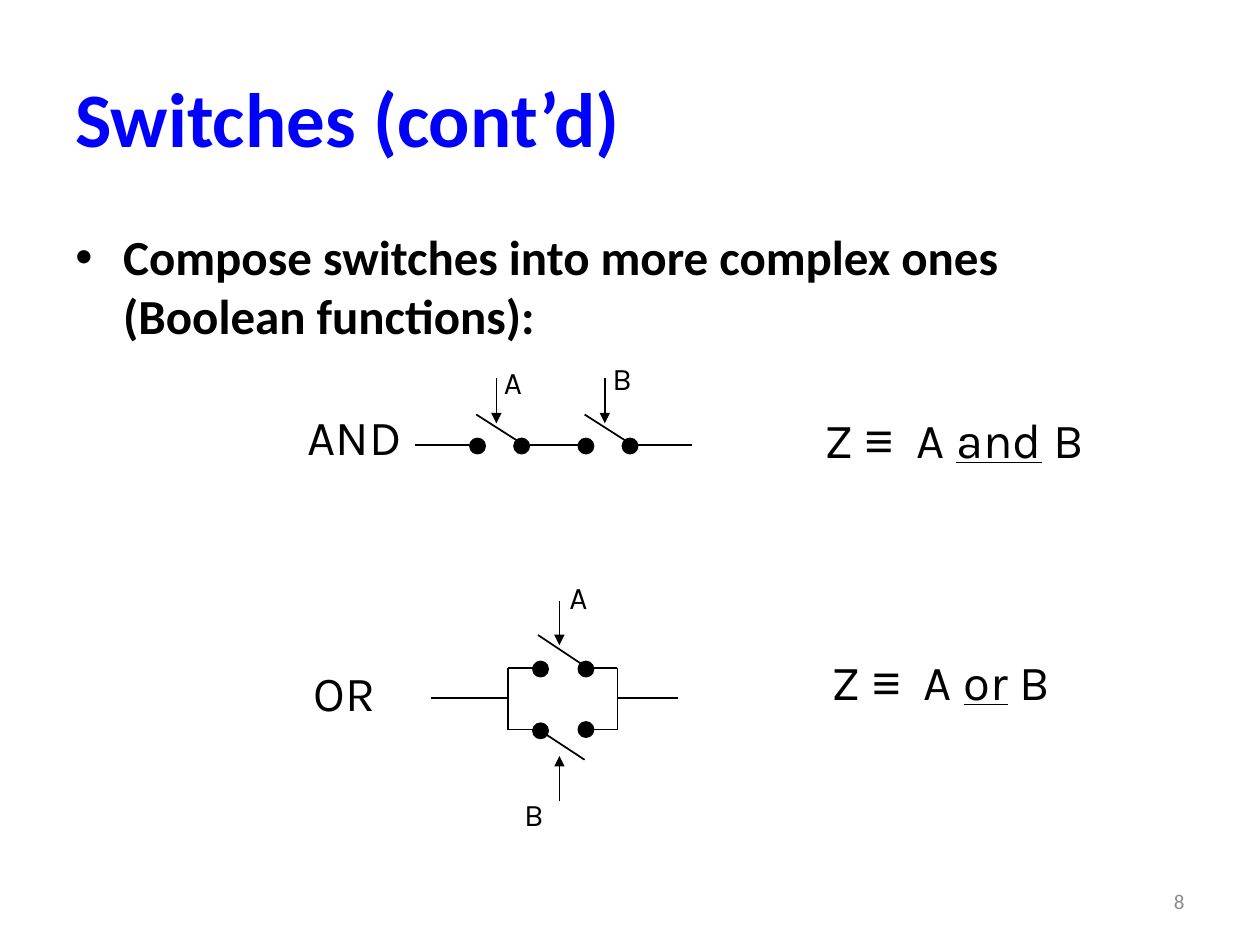
from pptx import Presentation
from pptx.dml.color import RGBColor
from pptx.enum.shapes import MSO_CONNECTOR as Connector, MSO_SHAPE as Shape
from pptx.enum.text import MSO_ANCHOR as Anchor, PP_ALIGN as Align
from pptx.oxml.ns import qn
from pptx.util import Inches, Pt
from lxml.etree import SubElement

BLACK, BLUE, GREY = "000000", "0000FF", "8C8C8C"
DOT = 0.12


def color(hex_value):
    return RGBColor.from_string(hex_value)


def write(paragraph, text, font="Karla", size=28, fill=BLACK, bold=False, underline=False):
    run = paragraph.add_run()
    run.text = text
    run.font.name, run.font.size = font, Pt(size)
    run.font.bold, run.font.underline = bold, underline
    run.font.color.rgb = color(fill)


class SwitchSlide:
    """Holds the drawing style and the slide being drawn."""

    def __init__(self, slide, ink=BLACK, weight=1):
        self.slide, self.ink, self.weight = slide, ink, weight

    def box(self, left, top, width, height, margins=(0.1, 0.05), wrap=True, anchor=Anchor.TOP):
        frame = self.slide.shapes.add_textbox(*map(Inches, (left, top, width, height))).text_frame
        frame.word_wrap, frame.vertical_anchor = wrap, anchor
        frame.margin_left = frame.margin_right = Inches(margins[0])
        frame.margin_top = frame.margin_bottom = Inches(margins[1])
        return frame.paragraphs[0]

    def label(self, text, left, top, width=0.6, height=0.49, size=18):
        paragraph = self.box(left, top, width, height, (0.02, 0.03), wrap=False)
        paragraph.line_spacing = Pt(26)
        if text:
            write(paragraph, text, size=size)
        return paragraph

    def formula(self, operator, left, top, width=2.2):
        paragraph = self.label("", left, top, width, 0.64)
        paragraph.space_before = Pt(11)
        write(paragraph, "Z ")
        write(paragraph, "≡", font="Arial")
        write(paragraph, "  A ")
        write(paragraph, operator, underline=True)
        write(paragraph, " B")

    def bullet(self, paragraph):
        props = paragraph._p.get_or_add_pPr()
        props.set("marL", str(Inches(0.38)))
        props.set("indent", str(-Inches(0.38)))
        SubElement(props, qn("a:buFont"), typeface="Arial")
        SubElement(props, qn("a:buChar"), char="•")

    def wire(self, x1, y1, x2, y2, arrow=False):
        wire = self.slide.shapes.add_connector(
            Connector.STRAIGHT, *map(Inches, (x1, y1, x2, y2)))
        wire.line.color.rgb = color(self.ink)
        wire.line.width = Pt(self.weight)
        if arrow:
            SubElement(wire.line._get_or_add_ln(), qn("a:tailEnd"), type="triangle")
        SubElement(wire._element.spPr, qn("a:effectLst"))

    def contact(self, left, top):
        dot = self.slide.shapes.add_shape(Shape.OVAL, *map(Inches, (left, top, DOT, DOT)))
        dot.shadow.inherit = False
        dot.fill.solid()
        dot.fill.fore_color.rgb = dot.line.color.rgb = color(self.ink)
        dot.line.width = Pt(self.weight)


def draw_and(page):
    page.label("AND", 2.42, 3.3, 0.99, size=28)
    for start in (3.29, 4.15, 5.01):
        page.wire(start, 3.53, start + 0.48, 3.53)
    for left, name, label_top in ((3.73, "A", 2.79), (4.59, "B", 2.76)):
        page.wire(left + 0.05, 3.29, left + 0.41, 3.52)
        page.wire(left + 0.21, 3, left + 0.21, 3.36, arrow=True)
        page.contact(left, 3.48)
        page.contact(left + 0.35, 3.48)
        page.label(name, left + 0.25, label_top)
    page.formula("and", 6.52, 3.33)


def draw_or(page):
    left_rail, right_rail, upper, middle, lower = 4.03, 4.9, 5.3, 5.54, 5.79
    page.label("OR", 2.47, 5.33, 0.82, size=28)
    page.wire(3.42, middle, left_rail, middle)
    page.wire(right_rail, middle, 5.38, middle)
    for rail in (left_rail, right_rail):
        page.wire(rail, upper, rail, lower)
    for branch in (upper, lower):
        page.wire(left_rail, branch, 4.28, branch)
        page.wire(4.65, branch, right_rail, branch)
    page.wire(4.66, 5.3, 4.27, 5.04)
    page.wire(4.29, 5.8, 4.64, 6.03)
    page.wire(4.44, 4.77, 4.44, 5.12, arrow=True)
    page.wire(4.44, 6.36, 4.44, 6, arrow=True)
    for left, top in ((4.23, 5.25), (4.23, 5.74), (4.59, 5.73), (4.59, 5.25)):
        page.contact(left, top)
    page.label("A", 4.5, 4.5)
    page.label("B", 4.14, 6.22)
    page.formula("or", 6.58, 5.25)


def main():
    deck = Presentation()
    deck.slide_width, deck.slide_height = Inches(10), Inches(7.5)
    page = SwitchSlide(deck.slides.add_slide(deck.slide_layouts[6]))

    draw_and(page)
    draw_or(page)

    title = page.box(0.5, 0.3, 9, 1.25, anchor=Anchor.MIDDLE)
    write(title, "Switches (cont’d)", font="Calibri", size=44, fill=BLUE, bold=True)

    statement = page.box(0.5, 1.75, 9, 4.95)
    statement.space_before = Pt(5.6)
    page.bullet(statement)
    write(statement, "Compose switches into more complex ones (Boolean functions):",
          font="Calibri", bold=True)

    number = page.box(7.17, 6.95, 2.33, 0.4, anchor=Anchor.MIDDLE)
    number.alignment = Align.RIGHT
    write(number, "8", font="Calibri", size=12, fill=GREY)

    deck.save("out.pptx")


if __name__ == "__main__":
    main()
